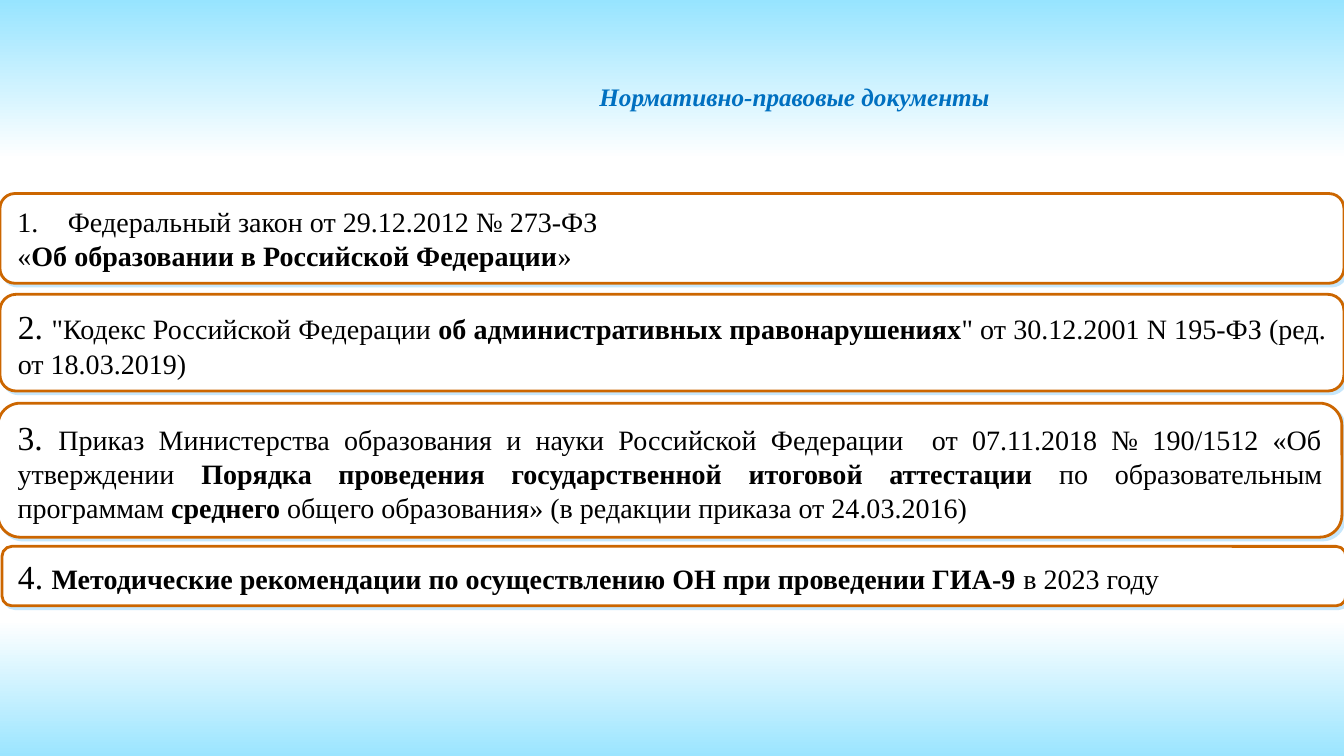
from pptx import Presentation
from pptx.dml.color import RGBColor
from pptx.enum.shapes import MSO_SHAPE
from pptx.enum.text import MSO_ANCHOR, MSO_AUTO_SIZE, PP_ALIGN
from pptx.oxml import parse_xml
from pptx.oxml.ns import nsdecls, qn
from pptx.util import Inches, Pt

ROUNDED = MSO_SHAPE.ROUNDED_RECTANGLE
MIDDLE = MSO_ANCHOR.MIDDLE
GROW = MSO_AUTO_SIZE.SHAPE_TO_FIT_TEXT
LEFT, CENTER, JUSTIFY = PP_ALIGN.LEFT, PP_ALIGN.CENTER, PP_ALIGN.JUSTIFY

WIDTH, HEIGHT = Inches(13.33), Inches(7.5)
COLUMNS, ROWS = 133.3, 75
BACKGROUND = [(0, "97E4FF"), (21, "FFFFFF"), (82, "FFFFFF"), (100, "9BE5FF")]

NUMBER = {"size": Pt(24)}
PLAIN = {"size": Pt(20)}
BOLD = {"size": Pt(20), "bold": True}
HEADING = {"size": Pt(18), "bold": True, "italic": True}
CARD_FRAME = {
    "word_wrap": True, "vertical_anchor": MIDDLE, "auto_size": GROW,
    "margin_left": Inches(0.13), "margin_right": Inches(0.13),
    "margin_top": Inches(0.06), "margin_bottom": Inches(0.06),
}
TITLE_FRAME = {"word_wrap": True, "vertical_anchor": MIDDLE}

LAW = [
    [("Федеральный закон от 29.12.2012 № 273-ФЗ", PLAIN)],
    [("«", PLAIN), ("Об образовании в Российской Федерации", BOLD), ("»", PLAIN)],
]
CODE = [[
    ("2. ", NUMBER),
    ('"Кодекс Российской Федерации ', PLAIN),
    ("об административных правонарушениях", BOLD),
    ('" от 30.12.2001 N 195-ФЗ (ред. от 18.03.2019)', PLAIN),
]]
ORDER = [[
    ("3. ", NUMBER),
    ("Приказ Министерства образования и науки Российской Федерации  "
     "от 07.11.2018 № 190/1512 «Об утверждении ", PLAIN),
    ("Порядка проведения государственной итоговой аттестации ", BOLD),
    ("по образовательным программам ", PLAIN),
    ("среднего", BOLD),
    (" общего образования» (в редакции приказа от 24.03.2016)", PLAIN),
]]
GUIDELINES = [[
    ("4. ", NUMBER),
    ("Методические рекомендации по осуществлению ОН при проведении ГИА-9 ", BOLD),
    ("в 2023 году", PLAIN),
]]
# Column, row and height in grid units, alignment, paragraphs
DOCUMENTS = [
    (0, 19.2, 8.9, LEFT, LAW),
    (0, 29.2, 9.6, JUSTIFY, CODE),
    (-0.2, 40, 13.3, JUSTIFY, ORDER),
    (0.2, 54.2, 5.9, JUSTIFY, GUIDELINES),
]


def rgb(value):
    return RGBColor.from_string(value)


def apply(target, values):
    for name, value in values.items():
        setattr(target, name, value)


class DocumentSlide:
    font = "Times New Roman"
    ink, title_ink = "000000", "0070C0"
    card_fill, card_line, card_shadow = "FFFFFF", "CC6600", "C6E7FC"

    def __init__(self, slide):
        self.slide = slide

    def place(self, column, row, columns, rows):
        """Turn grid units into left, top, width and height."""
        across, down = WIDTH / COLUMNS, HEIGHT / ROWS
        return (round(column * across), round(row * down),
                round(columns * across), round(rows * down))

    def background(self, stops):
        fill = self.slide.background.fill
        fill.gradient()
        fill.gradient_angle = 270  # counter-clockwise, so top to bottom
        stop_list = self.slide.element.find(".//" + qn("a:gsLst"))
        for stop in list(stop_list):
            stop_list.remove(stop)
        for percent, color in stops:
            stop_list.append(parse_xml(
                f'<a:gs {nsdecls("a")} pos="{percent * 1000}">'
                f'<a:srgbClr val="{color}"/></a:gs>'))

    def add_text(self, frame, paragraphs, align, color):
        for index, runs in enumerate(paragraphs):
            paragraph = frame.add_paragraph() if index else frame.paragraphs[0]
            paragraph.alignment = align
            for text, style in runs:
                run = paragraph.add_run()
                run.text = text
                apply(run.font, {"name": self.font, **style})
                run.font.color.rgb = rgb(color)

    def title(self, text, *area):
        frame = self.slide.shapes.add_textbox(*self.place(*area)).text_frame
        apply(frame, TITLE_FRAME)
        self.add_text(frame, [[(text, HEADING)]], CENTER, self.title_ink)

    def card(self, area, align, paragraphs):
        card = self.slide.shapes.add_shape(ROUNDED, *self.place(*area))
        card.fill.solid()
        card.fill.fore_color.rgb = rgb(self.card_fill)
        card.line.color.rgb = rgb(self.card_line)
        card.line.width = Pt(2)
        self.drop_shadow(card)
        apply(card.text_frame, CARD_FRAME)
        self.add_text(card.text_frame, paragraphs, align, self.ink)
        return card

    def drop_shadow(self, shape):
        shape.shadow.inherit = False
        shape.element.spPr.find(qn("a:effectLst")).append(parse_xml(
            f'<a:outerShdw {nsdecls("a")} dist="{Pt(2.8)}" dir="{45 * 60000}" '
            f'algn="ctr" rotWithShape="0"><a:srgbClr val="{self.card_shadow}"/>'
            '</a:outerShdw>'))

    def number_first(self, card):
        """Hang all paragraphs and give the first an automatic number."""
        for index, paragraph in enumerate(card.text_frame.paragraphs):
            properties = paragraph._p.get_or_add_pPr()
            properties.set("marL", str(Inches(0.5)))
            properties.set("indent", str(-Inches(0.5)))
            bullet = "buNone" if index else 'buAutoNum type="arabicPeriod"'
            properties.append(parse_xml(
                f'<a:{bullet} {nsdecls("a")}/>'))
            properties.append(parse_xml(
                f'<a:tabLst {nsdecls("a")}>'
                f'<a:tab pos="{Inches(0.14)}" algn="l"/></a:tabLst>'))


def main():
    presentation = Presentation()
    presentation.slide_width, presentation.slide_height = WIDTH, HEIGHT
    blank = presentation.slide_layouts[6]
    page = DocumentSlide(presentation.slides.add_slide(blank))
    page.background(BACKGROUND)
    page.title("Нормативно-правовые документы", 28.9, 5, 99.8, 9.2)
    cards = [page.card((column, row, COLUMNS, rows), align, paragraphs)
             for column, row, rows, align, paragraphs in DOCUMENTS]
    page.number_first(cards[0])
    presentation.save("out.pptx")


if __name__ == "__main__":
    main()
